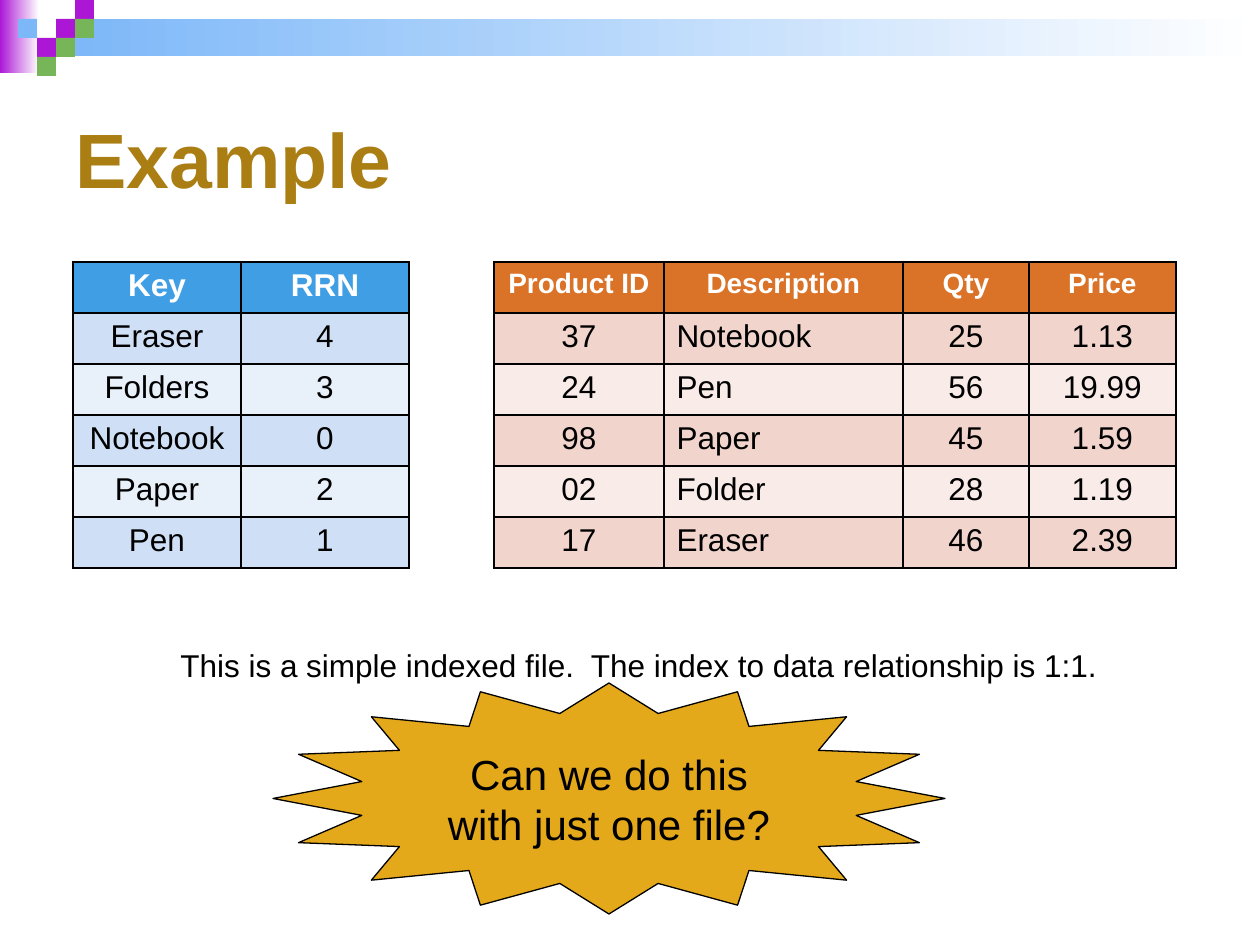
import pptx
import pptx.util
import pptx.dml.color
import pptx.enum.shapes
import pptx.enum.text
import pptx.oxml
import pptx.oxml.ns

RGB = pptx.dml.color.RGBColor
SHAPE = pptx.enum.shapes.MSO_SHAPE
ALIGN = pptx.enum.text.PP_ALIGN
ANCHOR = pptx.enum.text.MSO_ANCHOR

BLACK = RGB(0x00, 0x00, 0x00)
WHITE = RGB(0xFF, 0xFF, 0xFF)
PURPLE = RGB(0xAC, 0x17, 0xD6)
SKY = RGB(0x7C, 0xB7, 0xF8)
GREEN = RGB(0x77, 0xB5, 0x59)
BROWN = RGB(0xAB, 0x7E, 0x14)
GOLD = RGB(0xE4, 0xA8, 0x1B)
# Table colours: header, odd rows, even rows
BLUES = (RGB(0x3F, 0x9E, 0xE4), RGB(0xCF, 0xDF, 0xF5), RGB(0xE8, 0xF0, 0xFA))
REDS = (RGB(0xDA, 0x73, 0x28), RGB(0xF1, 0xD5, 0xCD), RGB(0xF8, 0xEB, 0xE8))

INDEX = [
    ("Key", "RRN"),
    ("Eraser", "4"),
    ("Folders", "3"),
    ("Notebook", "0"),
    ("Paper", "2"),
    ("Pen", "1"),
]
STOCK = [
    ("Product ID", "Description", "Qty", "Price"),
    ("37", "Notebook", "25", "1.13"),
    ("24", "Pen", "56", "19.99"),
    ("98", "Paper", "45", "1.59"),
    ("02", "Folder", "28", "1.19"),
    ("17", "Eraser", "46", "2.39"),
]
ROW = 51
TILE = 19


def px(*nums):
    """Turn pixels (126 to the inch) into EMU."""
    return [pptx.util.Emu(round(n * 914400 / 126)) for n in nums]


def write(frame, text, size=18, color=BLACK, bold=False, align=ALIGN.LEFT):
    para = frame.paragraphs[0]
    para.alignment = align
    run = para.add_run()
    run.text = text
    font = run.font
    font.name = "Arial"
    font.size = pptx.util.Pt(size)
    font.bold = bold
    font.color.rgb = color


def add_box(slide, box, color, kind=SHAPE.RECTANGLE, fade=False):
    shape = slide.shapes.add_shape(kind, *px(*box))
    shape.shadow.inherit = False
    shape.line.fill.background()
    if fade:
        shape.fill.gradient()
        shape.fill.gradient_angle = 0
        for stop, tone in zip(shape.fill.gradient_stops, (color, WHITE)):
            stop.color.rgb = tone
    else:
        shape.fill.solid()
        shape.fill.fore_color.rgb = color
    return shape


def add_label(slide, box, text, wrap=True, anchor=ANCHOR.TOP, **style):
    frame = slide.shapes.add_textbox(*px(*box)).text_frame
    frame.word_wrap = wrap
    frame.vertical_anchor = anchor
    write(frame, text, **style)


def rule_cell(cell):
    """Draw a thin black border; borders must come before the fill."""
    props = cell._tc.get_or_add_tcPr()
    for spot, side in enumerate(("lnL", "lnR", "lnT", "lnB")):
        line = pptx.oxml.parse_xml(
            f'<a:{side} {pptx.oxml.ns.nsdecls("a")} w="12700"><a:solidFill>'
            f'<a:srgbClr val="{BLACK}"/></a:solidFill></a:{side}>'
        )
        props.insert(spot, line)


def add_grid(slide, left, top, widths, rows, tones, head, lefts=()):
    """Add a banded table; columns listed in lefts have a left-aligned body."""
    box = px(left, top, sum(widths), ROW * len(rows))
    table = slide.shapes.add_table(len(rows), len(widths), *box).table
    for col, width in zip(table.columns, px(*widths)):
        col.width = width
    for r, row in enumerate(rows):
        table.rows[r].height = px(ROW)[0]
        first = r == 0
        for c, text in enumerate(row):
            cell = table.cell(r, c)
            cell.fill.solid()
            cell.fill.fore_color.rgb = tones[0] if first else tones[2 - r % 2]
            rule_cell(cell)
            write(
                cell.text_frame,
                text,
                size=head if first else 18,
                color=WHITE if first else BLACK,
                bold=first,
                align=ALIGN.LEFT if c in lefts and not first else ALIGN.CENTER,
            )


def add_banner(slide):
    add_box(slide, (0, 0, 39, 73), PURPLE, fade=True)
    add_box(slide, (57, 19, 1203, 37), SKY, fade=True)
    # Tiles as column, row and colour on a square grid
    tiles = [
        (3, 1, PURPLE), (4, 0, PURPLE), (4, 1, GREEN), (2, 2, PURPLE),
        (1, 1, SKY), (3, 2, GREEN), (2, 3, GREEN),
    ]
    for col, row, color in tiles:
        add_box(slide, (col * TILE - 1, row * TILE, TILE, TILE), color)


def main():
    deck = pptx.Presentation()
    deck.slide_width, deck.slide_height = px(1260, 945)
    slide = deck.slides.add_slide(deck.slide_layouts[6])

    # Banner and title
    add_banner(slide)
    add_label(slide, (63, 63, 1134, 189), "Example", anchor=ANCHOR.MIDDLE,
              size=44, color=BROWN, bold=True)

    # Index file and data file
    add_grid(slide, 73, 262, (168, 168), INDEX, BLUES, head=18)
    add_grid(slide, 494, 262, (170, 239, 126, 147), STOCK, REDS, head=16,
             lefts=(1,))

    # Remark and question
    add_label(slide, (168, 640, 942, 50),
              "This is a simple indexed file.  The index to data relationship is 1:1.",
              wrap=False)
    star = add_box(slide, (273, 683, 672, 231), GOLD, kind=SHAPE.STAR_16_POINT)
    star.line.color.rgb = BLACK
    star.line.width = pptx.util.Pt(0.75)
    star.text_frame.word_wrap = True
    write(star.text_frame, "Can we do this with just one file?", size=24,
          align=ALIGN.CENTER)

    deck.save("out.pptx")


if __name__ == "__main__":
    main()
